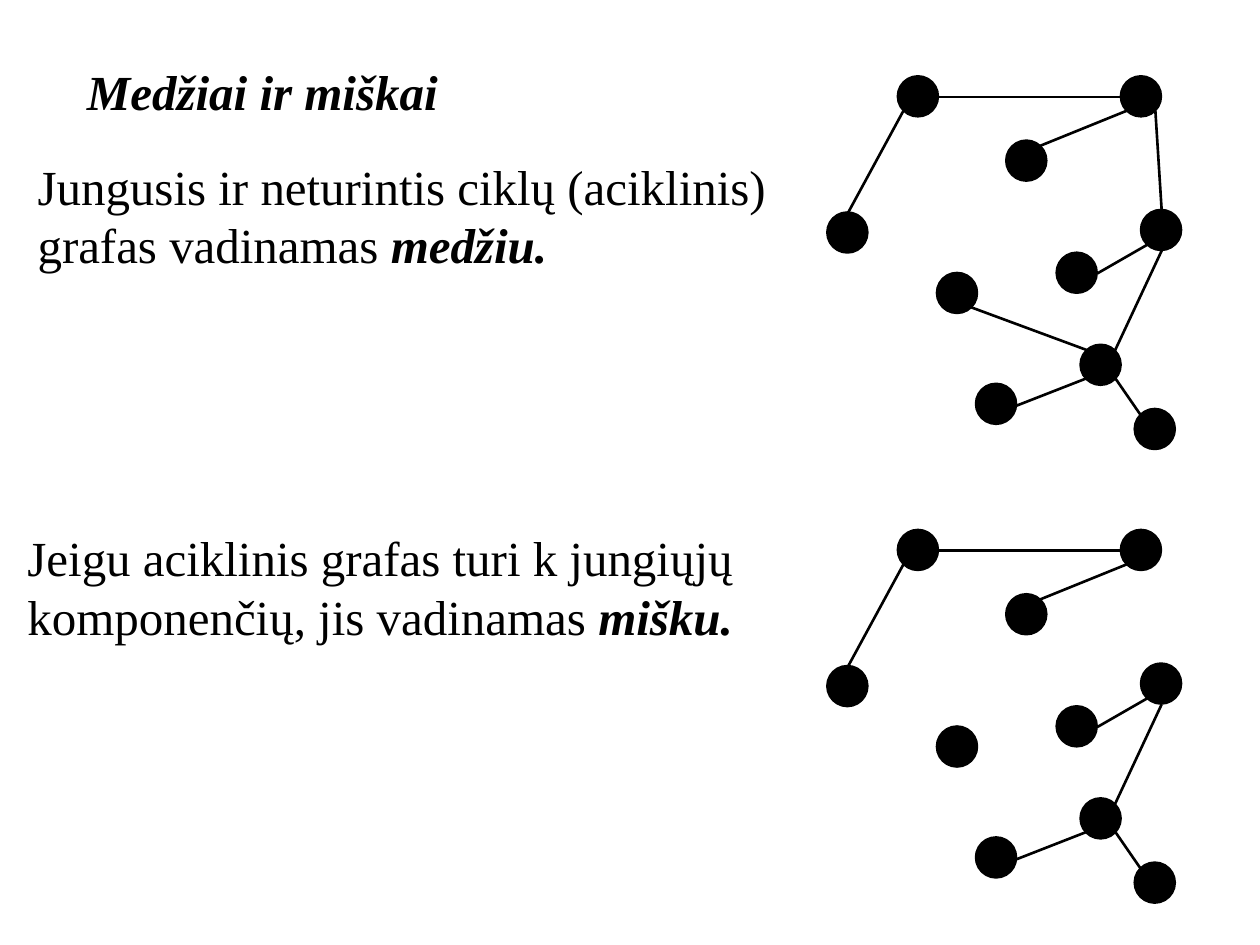
"""Build a slide on trees and forests with two graphs."""
from dataclasses import dataclass

import pptx
import pptx.dml.color
import pptx.enum.shapes
import pptx.enum.text
import pptx.oxml.ns
import pptx.util
from lxml import etree

PX = 9144
SIZE = 31
COLORS = {"ink": "000000", "paper": "FFFFFF"}
FONT = {"name": "Times New Roman", "size": pptx.util.Pt(28)}
STRONG = {"bold": True, "italic": True}
PLAIN = {"bold": False, "italic": False}
FRAME = {
    "word_wrap": True,
    "auto_size": pptx.enum.text.MSO_AUTO_SIZE.SHAPE_TO_FIT_TEXT,
    "vertical_anchor": pptx.enum.text.MSO_ANCHOR.TOP,
}


@dataclass(frozen=True)
class Box:
    left: int
    top: int
    width: int
    height: int


@dataclass(frozen=True)
class Node:
    left: int
    top: int


@dataclass(frozen=True)
class Edge:
    x1: int
    y1: int
    x2: int
    y2: int


@dataclass(frozen=True)
class Graph:
    top: int
    edges: tuple


NODES = (
    Node(713, 0), Node(890, 0), Node(657, 108), Node(906, 106),
    Node(744, 156), Node(858, 213), Node(839, 140), Node(799, 51),
    Node(901, 264), Node(775, 244),
)
SHARED = (
    Edge(744, 16, 890, 16), Edge(885, 217, 922, 138),
    Edge(673, 108, 717, 27), Edge(871, 156, 911, 133),
    Edge(815, 59, 894, 27), Edge(885, 239, 905, 268),
    Edge(799, 264, 863, 239),
)
JOINS = (Edge(917, 27, 922, 106), Edge(771, 183, 863, 217))
GRAPHS = (Graph(61, SHARED + JOINS), Graph(421, SHARED))


def px(count: int) -> int:
    return pptx.util.Emu(count * PX)


def tint(name: str) -> pptx.dml.color.RGBColor:
    return pptx.dml.color.RGBColor.from_string(COLORS[name])


def style(item: object, values: dict) -> None:
    for name, value in values.items():
        setattr(item, name, value)


def write(shape: object, box: Box, runs: tuple) -> None:
    style(shape, {
        "left": px(box.left), "top": px(box.top),
        "width": px(box.width), "height": px(box.height),
    })
    style(shape.text_frame, FRAME)
    para = shape.text_frame.paragraphs[0]
    para.alignment = pptx.enum.text.PP_ALIGN.LEFT
    for text, look in runs:
        run = para.add_run()
        run.text = text
        style(run.font, FONT | look)
        run.font.color.rgb = tint("ink")


def draw_node(group: object, node: Node, top: int) -> None:
    dot = group.shapes.add_shape(
        pptx.enum.shapes.MSO_SHAPE.OVAL,
        px(node.left), px(top + node.top), px(SIZE), px(SIZE),
    )
    dot.shadow.inherit = False
    dot.fill.solid()
    dot.fill.fore_color.rgb = tint("ink")
    dot.line.color.rgb = tint("ink")
    dot.line.width = pptx.util.Pt(2)


def draw_edge(group: object, edge: Edge, top: int) -> None:
    line = group.shapes.add_connector(
        pptx.enum.shapes.MSO_CONNECTOR.STRAIGHT,
        px(edge.x1), px(top + edge.y1), px(edge.x2), px(top + edge.y2),
    )
    line.line.color.rgb = tint("ink")
    line.line.width = pptx.util.Pt(1.5)
    etree.SubElement(line._element.spPr, pptx.oxml.ns.qn("a:effectLst"))


def draw_graph(slide: object, graph: Graph) -> None:
    group = slide.shapes.add_group_shape()
    for node in NODES:
        draw_node(group, node, graph.top)
    for edge in graph.edges:
        draw_edge(group, edge, graph.top)


def add_text(slide: object, box: Box, runs: tuple) -> None:
    write(slide.shapes.add_textbox(0, 0, 0, 0), box, runs)


def main() -> None:
    deck = pptx.Presentation()
    style(deck, {"slide_width": px(1000), "slide_height": px(750)})
    slide = deck.slides.add_slide(deck.slide_layouts[5])
    slide.background.fill.solid()
    slide.background.fill.fore_color.rgb = tint("paper")
    write(slide.shapes.title, Box(59, 44, 914, 57),
          (("Medžiai ir miškai", STRONG),))
    add_text(slide, Box(20, 119, 606, 104), (
        ("Jungusis ir neturintis ciklų (aciklinis) grafas vadinamas ", PLAIN),
        ("medžiu.", STRONG),
    ))
    add_text(slide, Box(12, 414, 606, 104), (
        ("Jeigu aciklinis grafas turi k jungiųjų komponenčių, "
         "jis vadinamas ", PLAIN),
        ("mišku.", STRONG),
    ))
    for graph in GRAPHS:
        draw_graph(slide, graph)
    deck.save("out.pptx")


if __name__ == "__main__":
    main()
